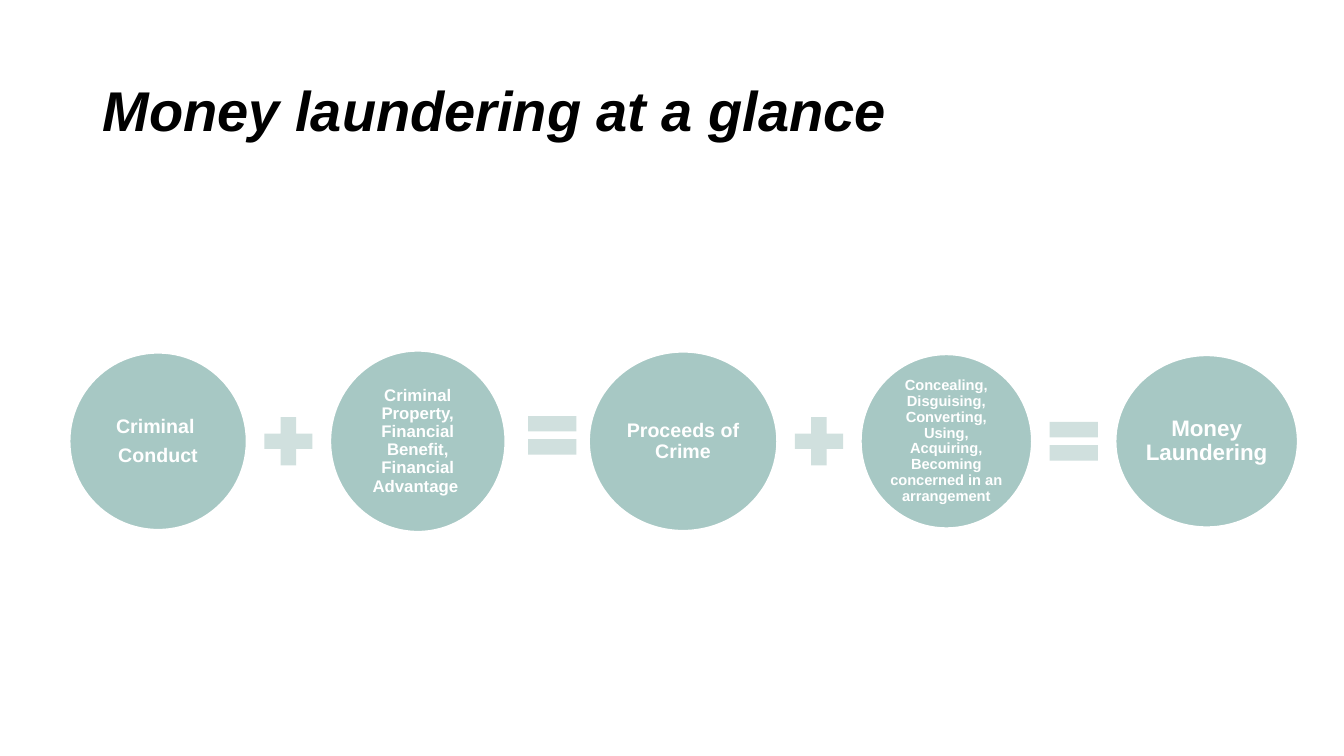
import pptx
import pptx.dml.color
import pptx.enum.shapes
import pptx.enum.text
import pptx.util

Cm = pptx.util.Cm
Pt = pptx.util.Pt
RGBColor = pptx.dml.color.RGBColor
SHAPES = pptx.enum.shapes.MSO_SHAPE
ALIGN = pptx.enum.text.PP_ALIGN

BLACK = RGBColor(0x00, 0x00, 0x00)
WHITE = RGBColor(0xFF, 0xFF, 0xFF)
SAGE = RGBColor(0xA7, 0xC8, 0xC4)
PALE_SAGE = RGBColor(0xD0, 0xE0, 0xDE)

CIRCLE_GAP = Cm(2.1)
SIGN_SIZE = Cm(1.65)

# Wording, text size, width and height in cm
TERMS = [
    ("Criminal \nConduct", 14, 4.47, 4.47),
    ("Criminal Property, Financial Benefit, Financial Advantage ", 12, 4.42, 4.57),
    ("Proceeds of Crime", 14, 4.75, 4.52),
    ("Concealing, Disguising, Converting, Using, Acquiring, Becoming "
     "concerned in an arrangement", 10.5, 4.32, 4.39),
    ("Money Laundering", 16, 4.6, 4.34),
]
# Sign after each term but the last, with its shift from the gap's middle in cm
SIGNS = [
    (SHAPES.MATH_PLUS, 0, 0),
    (SHAPES.MATH_EQUAL, 0.13, -0.15),
    (SHAPES.MATH_PLUS, 0, 0),
    (SHAPES.MATH_EQUAL, 0, 0),
]


def write_text(frame, text, *, size, color, align=ALIGN.LEFT, italic=False,
               margin=None, space_after=0):
    frame.word_wrap = True
    frame.vertical_anchor = pptx.enum.text.MSO_ANCHOR.MIDDLE
    if margin is not None:
        frame.margin_left = frame.margin_right = margin
        frame.margin_top = frame.margin_bottom = margin
    for index, line in enumerate(text.split("\n")):
        paragraph = frame.add_paragraph() if index else frame.paragraphs[0]
        paragraph.alignment = align
        paragraph.line_spacing = 0.9
        paragraph.space_after = Pt(space_after)
        run = paragraph.add_run()
        run.text = line
        run.font.name = "Arial"
        run.font.size = Pt(size)
        run.font.bold = True
        run.font.italic = italic
        run.font.color.rgb = color


def add_filled(slide, kind, left, top, width, height, fill):
    shape = slide.shapes.add_shape(kind, left, top, width, height)
    shape.shadow.inherit = False
    shape.fill.solid()
    shape.fill.fore_color.rgb = fill
    shape.line.fill.background()
    return shape


def add_title(slide, left, top, width, height):
    title = slide.shapes.add_textbox(left, top, width, height)
    write_text(title.text_frame, "Money laundering at a glance",
               size=40, color=BLACK, italic=True)


def add_equation(slide, left, middle):
    """Lay the terms out from left along the middle line, a sign in each gap."""
    for index, (wording, size, width, height) in enumerate(TERMS):
        width, height = Cm(width), Cm(height)
        term = add_filled(slide, SHAPES.OVAL, left, middle - height // 2,
                          width, height, SAGE)
        term.line.color.rgb = WHITE
        term.line.width = Pt(1.5)
        write_text(term.text_frame, wording, size=size, color=WHITE,
                   align=ALIGN.CENTER, margin=Cm(0.05), space_after=5.5)
        left += width
        if index < len(SIGNS):
            sign, shift_x, shift_y = SIGNS[index]
            add_filled(slide, sign,
                       left + (CIRCLE_GAP - SIGN_SIZE) // 2 + Cm(shift_x),
                       middle - SIGN_SIZE // 2 + Cm(shift_y),
                       SIGN_SIZE, SIGN_SIZE, PALE_SAGE)
        left += CIRCLE_GAP


def main():
    deck = pptx.Presentation()
    deck.slide_width = Cm(33.87)
    deck.slide_height = Cm(19.05)
    slide = deck.slides.add_slide(deck.slide_layouts[6])
    add_title(slide, Cm(2.34), Cm(1.02), Cm(30.38), Cm(3.68))
    add_equation(slide, Cm(1.75), Cm(11.12))
    deck.save("out.pptx")


if __name__ == "__main__":
    main()
